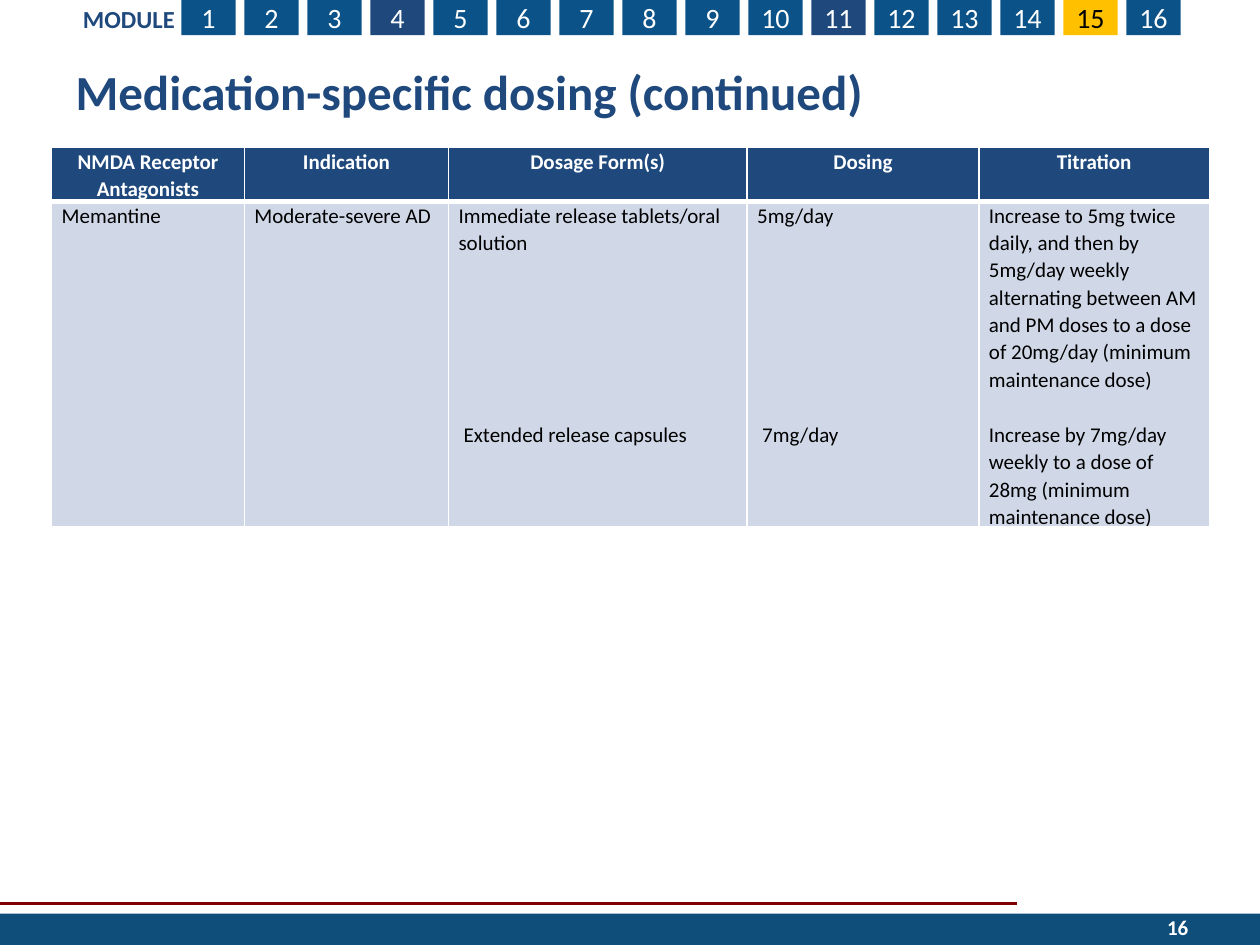
from lxml.etree import SubElement
from pptx import Presentation
from pptx.dml.color import RGBColor as Color
from pptx.enum.shapes import MSO_CONNECTOR as Connector, MSO_SHAPE as Shape
from pptx.enum.text import MSO_ANCHOR as Anchor, PP_ALIGN as Align
from pptx.oxml.ns import qn
from pptx.util import Inches, Pt

COLORS = {
    "navy": "1F497D", "blue": "0A5287", "footer": "0F4D7B", "gold": "FFC000",
    "rule": "800000", "pale": "D0D8E8", "white": "FFFFFF", "black": "000000",
}
MODULE_FILLS = {4: "navy", 11: "navy", 15: "gold"}
COLUMN_WIDTHS = [1.53, 1.62, 2.37, 1.84, 1.83]
ROW_HEIGHTS = [0.42, 2.58]
HEADINGS = ["NMDA Receptor Antagonists", "Indication", "Dosage Form(s)", "Dosing", "Titration"]
DOSING = [
    ["Memantine"],
    ["Moderate-severe AD"],
    ["Immediate release tablets/oral solution", "Extended release capsules"],
    ["5mg/day", "7mg/day"],
    ["Increase to 5mg twice daily, and then by 5mg/day weekly alternating between "
     "AM and PM doses to a dose of 20mg/day (minimum maintenance dose)",
     "Increase by 7mg/day weekly to a dose of 28mg (minimum maintenance dose)"],
]
LINE_HEIGHT = 15.67
SKIPPED_LINES = {2: 6, 3: 7, 4: 1}
INDENTS = {2: 0.04, 3: 0.04}


def color(name):
    return Color.from_string(COLORS[name])


class SlideBuilder:
    def __init__(self, slide, font="Calibri"):
        self.slide = slide
        self.font = font

    def add_span(self, para, text, size, tone, bold=False, align=Align.LEFT):
        para.alignment = align
        span = para.add_run()
        span.text = text
        values = {"name": self.font, "size": Pt(size), "bold": bold}
        for name, value in values.items():
            setattr(span.font, name, value)
        span.font.color.rgb = color(tone)

    def title(self, text, place):
        box = self.slide.shapes.title
        for name, value in zip(("left", "top", "width", "height"), place):
            setattr(box, name, Inches(value))
        box.text_frame.vertical_anchor = Anchor.MIDDLE
        self.add_span(box.text_frame.paragraphs[0], text, 28, "navy", True)

    def text(self, text, place, size, tone, align=Align.LEFT, anchor=Anchor.TOP):
        box = self.slide.shapes.add_textbox(*map(Inches, place))
        box.text_frame.word_wrap = True
        box.text_frame.vertical_anchor = anchor
        self.add_span(box.text_frame.paragraphs[0], text, size, tone, True, align)

    def rectangle(self, place, fill, text="", tone="white"):
        box = self.slide.shapes.add_shape(Shape.RECTANGLE, *map(Inches, place))
        box.shadow.inherit = False
        box.fill.solid()
        box.fill.fore_color.rgb = color(fill)
        box.line.fill.background()
        if text:
            frame = box.text_frame
            values = {"margin_left": 0, "margin_right": 0, "margin_top": 0,
                      "margin_bottom": 0, "vertical_anchor": Anchor.MIDDLE}
            for name, value in values.items():
                setattr(frame, name, value)
            self.add_span(frame.paragraphs[0], text, 16, tone, align=Align.CENTER)

    def line(self, start, end, tone, width):
        rule = self.slide.shapes.add_connector(
            Connector.STRAIGHT, *map(Inches, start + end))
        rule.line.color.rgb = color(tone)
        rule.line.width = Pt(width)
        SubElement(rule._element.spPr, qn("a:effectLst"))

    def borders(self, cell, widths):
        properties = cell._tc.get_or_add_tcPr()
        for side, width in zip("LRTB", widths):
            border = SubElement(properties, qn(f"a:ln{side}"), w=str(Pt(width)))
            fill = SubElement(border, qn("a:solidFill"))
            SubElement(fill, qn("a:srgbClr"), val=COLORS["white"])

    def cell(self, cell, texts, fill, tone, widths, gap=0, indent=0,
             bold=False, align=Align.LEFT):
        self.borders(cell, widths)
        cell.fill.solid()
        cell.fill.fore_color.rgb = color(fill)
        values = {"margin_left": Inches(0.08), "margin_right": Inches(0.08),
                  "margin_top": 0, "margin_bottom": 0}
        for name, value in values.items():
            setattr(cell, name, value)
        frame = cell.text_frame
        for index, text in enumerate(texts):
            para = frame.add_paragraph() if index else frame.paragraphs[0]
            para.line_spacing = 1.07
            if index:
                para.space_before = Pt(gap)
                para._p.get_or_add_pPr().set("marL", str(Inches(indent)))
            self.add_span(para, text, 12, tone, bold, align)

    def table(self, place):
        shape = self.slide.shapes.add_table(
            len(ROW_HEIGHTS), len(COLUMN_WIDTHS), *map(Inches, place))
        table = shape.table
        table.horz_banding = False
        for column, width in zip(table.columns, COLUMN_WIDTHS):
            column.width = Inches(width)
        for row, height in zip(table.rows, ROW_HEIGHTS):
            row.height = Inches(height)
        for index, (heading, texts) in enumerate(zip(HEADINGS, DOSING)):
            self.cell(table.cell(0, index), [heading], "navy", "white", (1, 1, 1, 3),
                      bold=True, align=Align.CENTER)
            self.cell(table.cell(1, index), texts, "pale", "black", (1, 1, 3, 1),
                      gap=round(SKIPPED_LINES.get(index, 0) * LINE_HEIGHT, 1),
                      indent=INDENTS.get(index, 0))


def main():
    deck = Presentation()
    deck.slide_width, deck.slide_height = Inches(10), Inches(7.5)
    page = SlideBuilder(deck.slides.add_slide(deck.slide_layouts[5]))
    page.line((0, 7.17), (8.07, 7.17), "rule", 1.5)
    page.rectangle((0, 7.25, 10, 0.25), "footer")
    page.text("MODULE", (0.56, -0.02, 1.01, 0.34), 14, "navy")
    for number in range(1, 17):
        fill = MODULE_FILLS.get(number, "blue")
        tone = "black" if fill == "gold" else "white"
        page.rectangle((0.94 + 0.5 * number, 0, 0.43, 0.28), fill, str(number), tone)
    page.text("16", (7.2, 7.16, 2.33, 0.4), 12, "white", Align.RIGHT, Anchor.MIDDLE)
    page.title("Medication-specific dosing (continued)", (0.5, 0.35, 9, 0.74))
    page.table((0.41, 1.17, sum(COLUMN_WIDTHS), sum(ROW_HEIGHTS)))
    deck.save("out.pptx")


if __name__ == "__main__":
    main()
